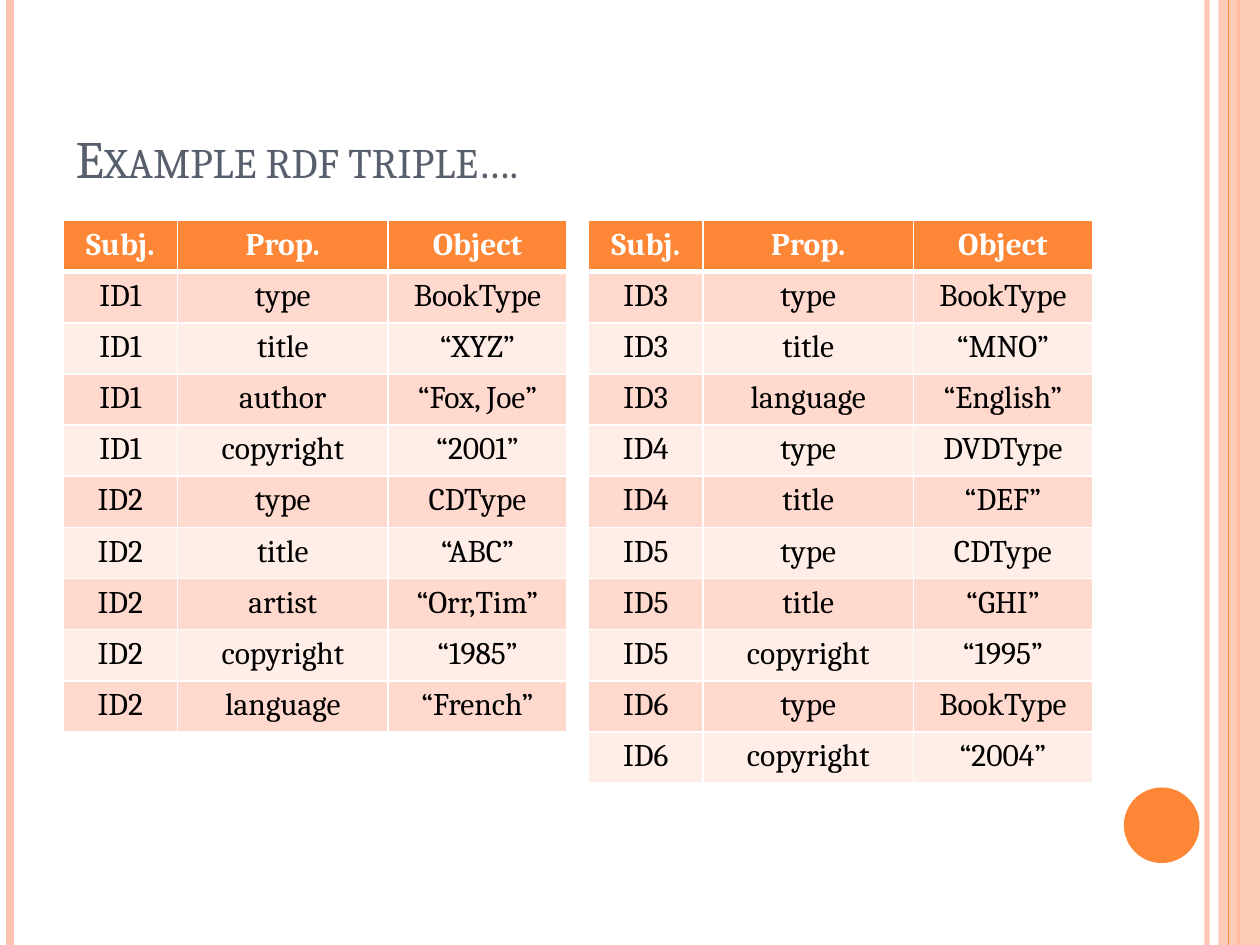
from lxml import etree
from pptx import Presentation
from pptx.dml.color import RGBColor
from pptx.enum.shapes import MSO_CONNECTOR, MSO_SHAPE
from pptx.enum.text import MSO_ANCHOR, MSO_AUTO_SIZE, PP_ALIGN
from pptx.oxml.ns import qn
from pptx.util import Inches, Pt

STRAIGHT = MSO_CONNECTOR.STRAIGHT
RECTANGLE, OVAL = MSO_SHAPE.RECTANGLE, MSO_SHAPE.OVAL
LEFT, CENTER = PP_ALIGN.LEFT, PP_ALIGN.CENTER
BOTTOM = MSO_ANCHOR.BOTTOM
NO_AUTOFIT = MSO_AUTO_SIZE.NONE

FONT = "Cambria"
COLORS = {
    "orange": "FE8637",
    "peach": "FEC3AE",
    "slate": "575F6D",
    "dark band": "FFD9CE",
    "light band": "FFEDE8",
    "white": "FFFFFF",
    "black": "000000",
}
SLIDE_WIDTH, SLIDE_HEIGHT = 10, 7.5
TITLE = "Example rdf triple…."
HEADER = ("Subj.", "Prop.", "Object")
TRIPLES_LEFT = [
    ("ID1", "type", "BookType"),
    ("ID1", "title", "“XYZ”"),
    ("ID1", "author", "“Fox, Joe”"),
    ("ID1", "copyright", "“2001”"),
    ("ID2", "type", "CDType"),
    ("ID2", "title", "“ABC”"),
    ("ID2", "artist", "“Orr,Tim”"),
    ("ID2", "copyright", "“1985”"),
    ("ID2", "language", "“French”"),
]
TRIPLES_RIGHT = [
    ("ID3", "type", "BookType"),
    ("ID3", "title", "“MNO”"),
    ("ID3", "language", "“English”"),
    ("ID4", "type", "DVDType"),
    ("ID4", "title", "“DEF”"),
    ("ID5", "type", "CDType"),
    ("ID5", "title", "“GHI”"),
    ("ID5", "copyright", "“1995”"),
    ("ID6", "type", "BookType"),
    ("ID6", "copyright", "“2004”"),
]
TABLES = [(4.67, TRIPLES_RIGHT), (0.5, TRIPLES_LEFT)]
TABLE_TOP = 1.75
COLUMN_WIDTHS = (0.91, 1.67, 1.42)
ROW_HEIGHT = 4.06 / 10
STRIPES_BEHIND = [(9.58, "peach", 3, 93), (0.08, "peach", 4.5, 100), (9.83, "orange", 1.5, 100)]
STRIPES_FRONT = [(9.75, "orange", 0.75, 100)]


def rgb(name):
    """Return the named colour."""
    return RGBColor.from_string(COLORS[name])


def set_opacity(shape_properties, percent):
    """Make the first colour of a fill or line partly transparent."""
    color = next(shape_properties.iter(qn("a:srgbClr")))
    etree.SubElement(color, qn("a:alpha"), val=str(percent * 1000))


def add_stripes(slide, stripes):
    """Draw full-height vertical lines."""
    for x, color, width, opacity in stripes:
        line = slide.shapes.add_connector(STRAIGHT, Inches(x), 0, Inches(x), Inches(SLIDE_HEIGHT))
        line.line.color.rgb = rgb(color)
        line.line.width = Pt(width)
        properties = line._element.spPr
        if opacity < 100:
            set_opacity(properties, opacity)
        etree.SubElement(properties, qn("a:effectLst"))


def add_filled_shape(slide, kind, box, color):
    """Draw a plain shape without outline or shadow."""
    shape = slide.shapes.add_shape(kind, *map(Inches, box))
    shape.shadow.inherit = False
    shape.fill.solid()
    shape.fill.fore_color.rgb = rgb(color)
    shape.line.fill.background()
    return shape


def add_run(paragraph, text, size, color, bold=False):
    """Add one styled run to a paragraph."""
    run = paragraph.add_run()
    run.text = text
    run.font.name = FONT
    run.font.size = Pt(size)
    run.font.bold = bold
    run.font.color.rgb = rgb(color)
    return run


def set_borders(cell, top, bottom):
    """Give a cell white borders, with top and bottom widths in points."""
    properties = cell._tc.get_or_add_tcPr()
    widths = {"lnL": 1, "lnR": 1, "lnT": top, "lnB": bottom}
    for position, (tag, width) in enumerate(widths.items()):
        border = etree.Element(qn(f"a:{tag}"), w=str(Pt(width)))
        fill = etree.SubElement(border, qn("a:solidFill"))
        etree.SubElement(fill, qn("a:srgbClr"), val=COLORS["white"])
        properties.insert(position, border)


def add_triples(slide, left, triples):
    """Add a banded table of triples under an orange header."""
    rows = [HEADER, *triples]
    frame = slide.shapes.add_table(
        len(rows), len(HEADER), Inches(left), Inches(TABLE_TOP),
        Inches(sum(COLUMN_WIDTHS)), Inches(ROW_HEIGHT * len(rows)),
    )
    table = frame.table
    for column, width in zip(table.columns, COLUMN_WIDTHS):
        column.width = Inches(width)
    for row_index, values in enumerate(rows):
        table.rows[row_index].height = Inches(ROW_HEIGHT)
        is_header = row_index == 0
        band = "dark band" if row_index % 2 else "light band"
        for column_index, value in enumerate(values):
            cell = table.cell(row_index, column_index)
            cell.fill.solid()
            cell.fill.fore_color.rgb = rgb("orange" if is_header else band)
            set_borders(cell, 3 if row_index == 1 else 1, 3 if is_header else 1)
            paragraph = cell.text_frame.paragraphs[0]
            paragraph.alignment = CENTER
            add_run(paragraph, value, 18, "white" if is_header else "black", is_header)


def add_title(slide):
    """Place the title in small capitals."""
    title = slide.shapes.title
    title.left, title.top, title.width, title.height = map(Inches, (0.5, 0.3, 8.17, 1.25))
    frame = title.text_frame
    frame.auto_size = NO_AUTOFIT
    frame.word_wrap = True
    frame.vertical_anchor = BOTTOM
    paragraph = frame.paragraphs[0]
    paragraph.alignment = LEFT
    run = add_run(paragraph, TITLE, 30, "slate")
    run.font._element.set("cap", "small")


def main():
    """Build the slide of example triples."""
    presentation = Presentation()
    presentation.slide_width = Inches(SLIDE_WIDTH)
    presentation.slide_height = Inches(SLIDE_HEIGHT)
    slide = presentation.slides.add_slide(presentation.slide_layouts[5])
    add_stripes(slide, STRIPES_BEHIND)
    side_band = add_filled_shape(slide, RECTANGLE, (9.67, 0, 0.33, SLIDE_HEIGHT), "peach")
    set_opacity(side_band._element.spPr, 87)
    add_stripes(slide, STRIPES_FRONT)
    add_filled_shape(slide, OVAL, (8.92, 6.25, 0.6, 0.6), "orange")
    add_title(slide)
    for left, triples in TABLES:
        add_triples(slide, left, triples)
    presentation.save("out.pptx")


if __name__ == "__main__":
    main()
